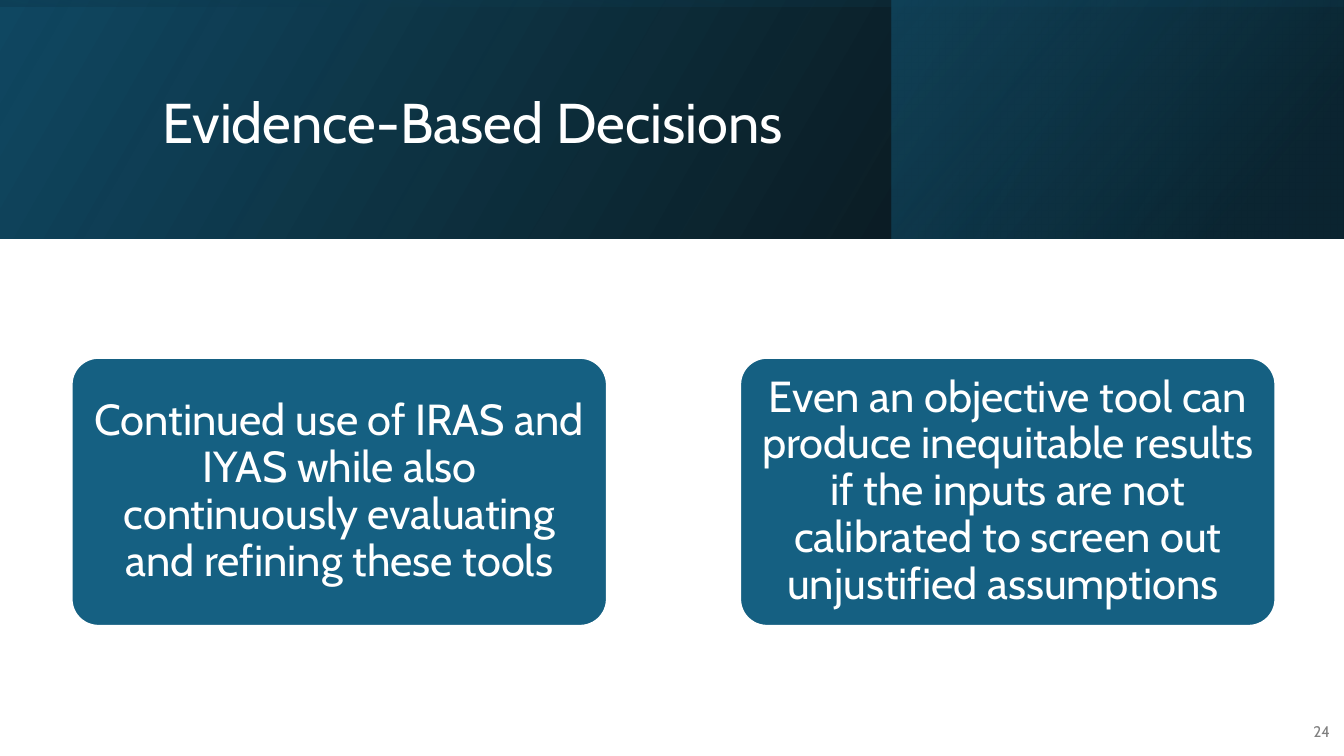
from lxml.etree import SubElement
from pptx import Presentation
from pptx.dml.color import RGBColor
from pptx.enum.shapes import MSO_SHAPE as Shape
from pptx.enum.text import MSO_ANCHOR as Anchor, PP_ALIGN as Align
from pptx.oxml.ns import qn
from pptx.util import Inches, Pt

COLORS = {
    "white": "FFFFFF",
    "black": "000000",
    "navy": "104862",
    "deep": "0B3041",
    "teal": "156082",
    "gray": "808080",
}
FONT = "Cabin"
SLIDE_WIDTH, SLIDE_HEIGHT = 13.33, 7.5
BAND_HEIGHT = 2.37
CARD_LEFT, CARD_TOP, CARD_STEP = 0.71, 3.55, 6.63
CARD_WIDTH, CARD_HEIGHT = 5.31, 2.66
CARD_TEXTS = [
    "Continued use of IRAS and IYAS while also continuously evaluating "
    "and refining these tools",
    "Even an objective tool can produce inequitable results if the inputs "
    "are not calibrated to screen out unjustified assumptions ",
]


def rgb(name):
    return RGBColor.from_string(COLORS[name])


class SlideBuilder:
    def __init__(self, deck):
        self.slide = deck.slides.add_slide(deck.slide_layouts[5])

    def set_text(self, shape, text, size, color="white", align=Align.LEFT, spacing=None):
        frame = shape.text_frame
        frame.word_wrap = True
        frame.vertical_anchor = Anchor.MIDDLE
        frame.text = text
        para = frame.paragraphs[0]
        para.alignment = align
        para.line_spacing = spacing
        font = para.runs[0].font
        font.name, font.size = FONT, Pt(size)
        font.color.rgb = rgb(color)
        return frame

    def add_shape(self, kind, left, top, width, height):
        shape = self.slide.shapes.add_shape(
            kind, Inches(left), Inches(top), Inches(width), Inches(height))
        shape.shadow.inherit = False
        return shape

    def gradient(self, left, top, width, height, stops, angle, rotation=0):
        """Add a mirrored rectangle; stops are (percent, color, opacity percent)."""
        band = self.add_shape(Shape.RECTANGLE, left, top, width, height)
        band.rotation = rotation
        band._element.spPr.xfrm.set("flipH", "1")
        band.line.fill.background()
        band.fill.gradient()
        band.fill.gradient_angle = angle
        for stop, (percent, color, opacity) in zip(band.fill.gradient_stops, stops):
            stop.position = percent / 100
            stop.color.rgb = rgb(color)
            color_node = stop._gs.find(qn("a:srgbClr"))
            SubElement(color_node, qn("a:alpha")).set("val", str(opacity * 1000))

    def title(self, text, left, top, width, height):
        title = self.slide.shapes.title
        title.left, title.top = Inches(left), Inches(top)
        title.width, title.height = Inches(width), Inches(height)
        self.set_text(title, text, 40, spacing=0.9)
        # Placeholders sit first in the tree; bring the title above the bands.
        self.slide.shapes._spTree.append(title._element)

    def page_number(self, text, left, top, width, height):
        box = self.slide.shapes.add_textbox(
            Inches(left), Inches(top), Inches(width), Inches(height))
        self.set_text(box, text, 11, "gray", Align.RIGHT)

    def card(self, text, left, top, width, height):
        card = self.add_shape(Shape.ROUNDED_RECTANGLE, left, top, width, height)
        card.adjustments[0] = 0.1
        card.fill.solid()
        card.fill.fore_color.rgb = rgb("teal")
        card.line.color.rgb = rgb("white")
        card.line.width = Pt(1.5)
        frame = self.set_text(card, text, 31, align=Align.CENTER, spacing=0.9)
        frame.margin_left = frame.margin_right = Inches(0.06)
        frame.margin_top = frame.margin_bottom = Inches(0.04)


def main():
    deck = Presentation()
    deck.slide_width, deck.slide_height = Inches(SLIDE_WIDTH), Inches(SLIDE_HEIGHT)
    page = SlideBuilder(deck)

    page.gradient(0, 0, SLIDE_WIDTH, BAND_HEIGHT,
                  [(0, "black", 96), (100, "navy", 100)], angle=30)
    page.gradient(8.84, 0, 4.48, BAND_HEIGHT,
                  [(19, "deep", 68), (100, "teal", 48)], angle=40)
    # Upright strip turned on its side to cover the whole band.
    offset = (SLIDE_WIDTH - BAND_HEIGHT) / 2
    page.gradient(offset, -offset, BAND_HEIGHT, SLIDE_WIDTH,
                  [(23, "navy", 16), (99, "black", 45)], angle=10, rotation=270)

    page.title("Evidence-Based Decisions", 1.51, 0.38, 10.63, 1.72)
    page.page_number("24", 12.8, 7.06, 0.49, 0.4)
    for index, text in enumerate(CARD_TEXTS):
        page.card(text, CARD_LEFT + index * CARD_STEP, CARD_TOP,
                  CARD_WIDTH, CARD_HEIGHT)

    deck.save("out.pptx")


if __name__ == "__main__":
    main()
